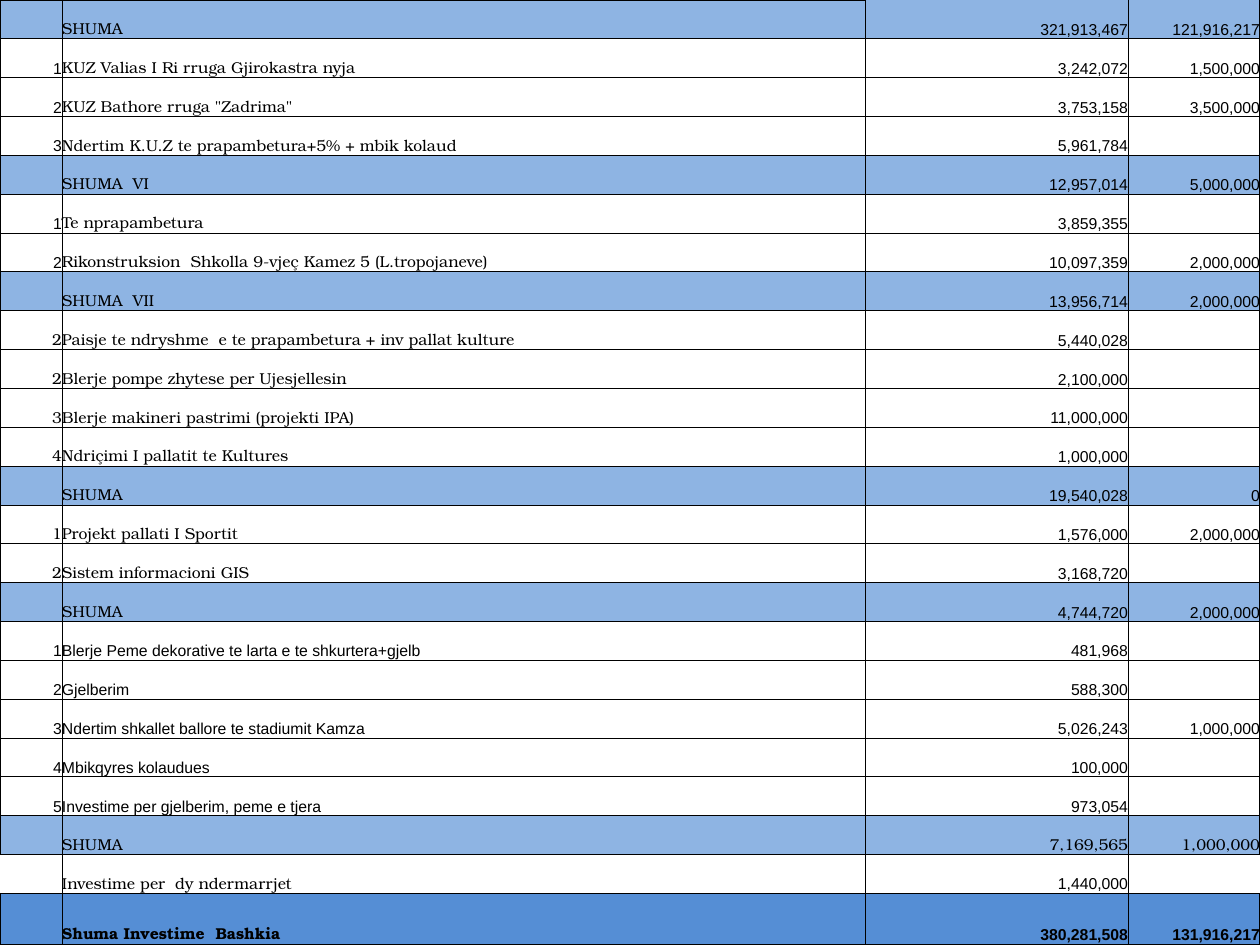
from lxml import etree
from pptx import Presentation
from pptx.dml.color import RGBColor
from pptx.enum.text import MSO_ANCHOR, PP_ALIGN
from pptx.oxml.ns import qn
from pptx.util import Pt

LEFT, RIGHT = PP_ALIGN.LEFT, PP_ALIGN.RIGHT
BOTTOM = MSO_ANCHOR.BOTTOM
PX = 914400 / 126
WIDE, HIGH, BODY = 1260, 945, 894
SANS, SERIF = "Arial", "TeX Gyre Bonum"
WHITE, LIGHT, DARK, BLACK = "FFFFFF", "8EB4E3", "558ED5", "000000"
COLS = [62, 803, 263, 132]
ROWS = [
    ("", "SHUMA", "321,913,467", "121,916,217"),
    ("1", "KUZ Valias I Ri rruga Gjirokastra nyja", "3,242,072", "1,500,000"),
    ("2", 'KUZ Bathore rruga "Zadrima"', "3,753,158", "3,500,000"),
    ("3", "Ndertim K.U.Z te prapambetura+5% + mbik kolaud", "5,961,784", ""),
    ("", "SHUMA  VI", "12,957,014", "5,000,000"),
    ("1", "Te nprapambetura", "3,859,355", ""),
    ("2", "Rikonstruksion  Shkolla 9-vjeç Kamez 5 (L.tropojaneve)", "10,097,359", "2,000,000"),
    ("", "SHUMA  VII", "13,956,714", "2,000,000"),
    ("2", "Paisje te ndryshme  e te prapambetura + inv pallat kulture", "5,440,028", ""),
    ("2", "Blerje pompe zhytese per Ujesjellesin", "2,100,000", ""),
    ("3", "Blerje makineri pastrimi (projekti IPA)", "11,000,000", ""),
    ("4", "Ndriçimi I pallatit te Kultures", "1,000,000", ""),
    ("", "SHUMA", "19,540,028", "0"),
    ("1", "Projekt pallati I Sportit", "1,576,000", "2,000,000"),
    ("2", "Sistem informacioni GIS", "3,168,720", ""),
    ("", "SHUMA", "4,744,720", "2,000,000"),
    ("1", "Blerje Peme dekorative te larta e te shkurtera+gjelb", "481,968", ""),
    ("2", "Gjelberim", "588,300", ""),
    ("3", "Ndertim shkallet ballore te stadiumit Kamza", "5,026,243", "1,000,000"),
    ("4", "Mbikqyres kolaudues", "100,000", ""),
    ("5", "Investime per gjelberim, peme e tjera", "973,054", ""),
    ("", "SHUMA", "7,169,565", "1,000,000"),
    ("", "Investime per  dy ndermarrjet", "1,440,000", ""),
    ("", "Shuma Investime  Bashkia", "380,281,508", "131,916,217"),
]
LAST = len(ROWS) - 1
SERIF_NUMS = range(8, 15)
SANS_NAMES = range(16, 21)
SERIF_SUM = 21
BARE = {(0, 2): "T", (0, 3): "T", (22, 0): "L", (22, 3): "R"}


def color(code):
    return RGBColor.from_string(code)


def write(cell, text, font=SANS, size=9, bold=False, align=LEFT):
    para = cell.text_frame.paragraphs[0]
    para.alignment = align
    run = para.add_run()
    run.text = text
    run.font.name = font
    run.font.size = Pt(size)
    run.font.bold = bold
    run.font.color.rgb = color(BLACK)


deck = Presentation()
deck.slide_width = round(WIDE * PX)
deck.slide_height = round(HIGH * PX)
slide = deck.slides.add_slide(deck.slide_layouts[6])
frame = slide.shapes.add_table(
    len(ROWS), len(COLS), 0, 0, deck.slide_width, deck.slide_height)
table = frame.table
table.first_row = False
table.horz_banding = False
for col, width in zip(table.columns, COLS):
    col.width = round(width * PX)

for i, row in enumerate(ROWS):
    height = HIGH - BODY if i == LAST else BODY / LAST
    table.rows[i].height = round(height * PX)
    fill = WHITE
    if row[1].startswith("SHUMA"):
        fill = LIGHT
    elif i == LAST:
        fill = DARK
    for j, text in enumerate(row):
        cell = table.cell(i, j)
        cell.margin_left = cell.margin_right = 0
        cell.margin_top = cell.margin_bottom = 0
        cell.vertical_anchor = BOTTOM
        props = cell._tc.get_or_add_tcPr()
        for side in "LRTB":
            line = etree.SubElement(props, qn("a:ln" + side), w=str(Pt(0.5)))
            if side == BARE.get((i, j)):
                etree.SubElement(line, qn("a:noFill"))
            else:
                solid = etree.SubElement(line, qn("a:solidFill"))
                etree.SubElement(solid, qn("a:srgbClr"), val=BLACK)
        cell.fill.solid()
        cell.fill.fore_color.rgb = color(fill)
        if j == 0:
            serif = i in SERIF_NUMS
        elif j == 1:
            serif = i not in SANS_NAMES
        else:
            serif = i == SERIF_SUM
        write(cell, text, font=SERIF if serif else SANS,
              bold=i == LAST, align=LEFT if j == 1 else RIGHT)

deck.save("out.pptx")
